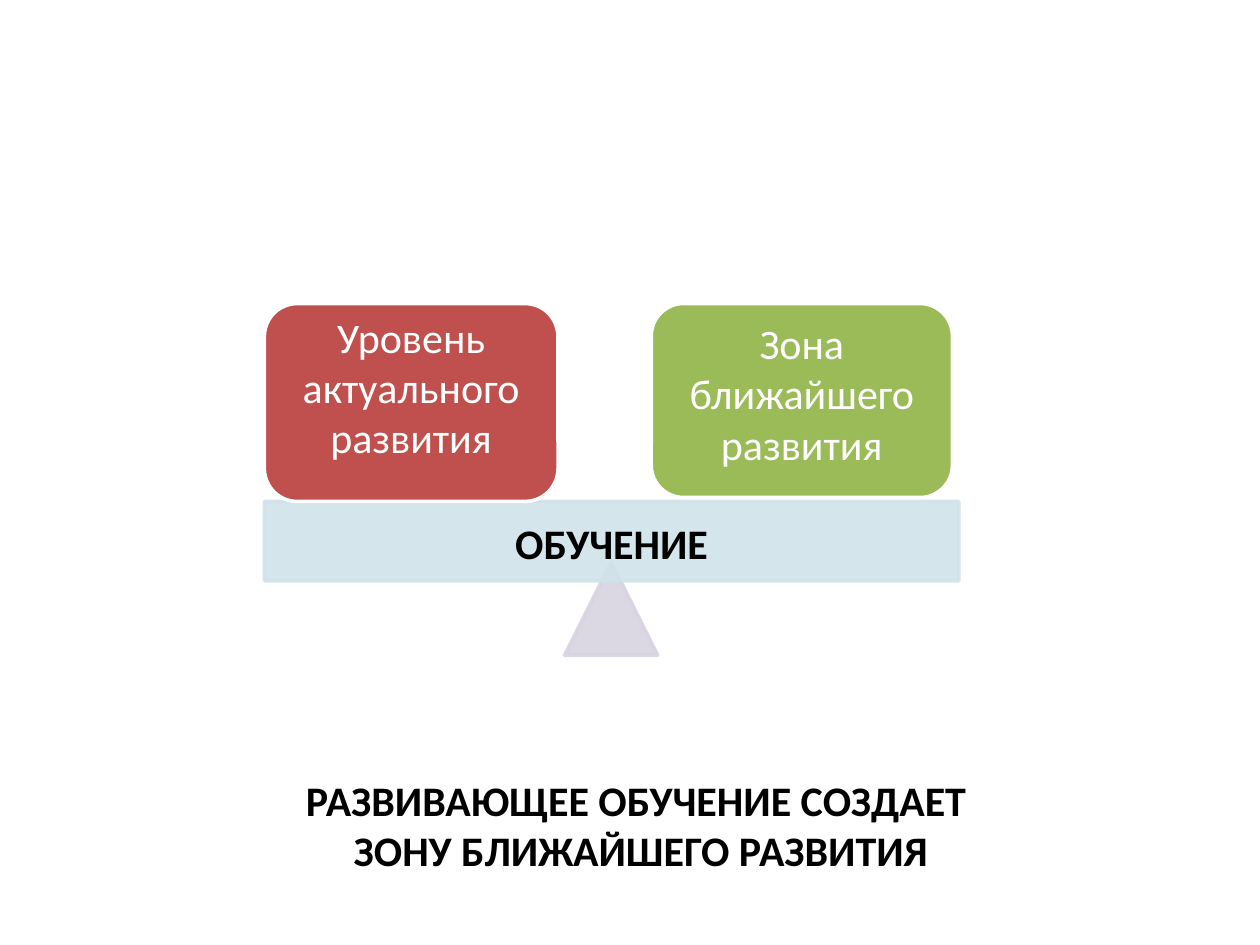
from dataclasses import dataclass

from lxml.etree import SubElement
from pptx import Presentation
from pptx.dml.color import RGBColor
from pptx.enum.shapes import MSO_SHAPE
from pptx.enum.text import MSO_ANCHOR, PP_ALIGN
from pptx.oxml.ns import qn
from pptx.util import Cm, Pt

COLORS = {
    "white": "FFFFFF",
    "black": "000000",
    "actual": "C0504D",
    "zone": "9BBB59",
    "plank": "D0E3EA",
    "pivot": "D8D3E0",
}
PAN_TOP = 6.12
SCALE_ALPHA = 90


@dataclass
class Box:
    """Position and size in centimetres."""
    left: float
    top: float
    width: float
    height: float

    def lengths(self) -> tuple:
        return Cm(self.left), Cm(self.top), Cm(self.width), Cm(self.height)


@dataclass
class Pan:
    box: Box
    color: str
    text: str
    bottom_inset: float


PANS = [
    Pan(Box(5.33, PAN_TOP, 5.92, 3.99), "actual", "Уровень актуального развития", 0.64),
    Pan(Box(13.13, PAN_TOP, 6.07, 3.91), "zone", "Зона ближайшего развития", 0.3),
]


def rgb(name: str) -> RGBColor:
    return RGBColor.from_string(COLORS[name])


def add_block(slide, kind: MSO_SHAPE, box: Box, fill: str, line: str, alpha: int = 100):
    block = slide.shapes.add_shape(kind, *box.lengths())
    block.shadow.inherit = False
    block.fill.solid()
    block.fill.fore_color.rgb = rgb(fill)
    block.line.color.rgb = rgb(line)
    block.line.width = Pt(2)
    if alpha < 100:
        for color in block._element.spPr.iter(qn("a:srgbClr")):
            SubElement(color, qn("a:alpha"), val=str(alpha * 1000))
    return block


def write_lines(frame, lines: list[str], color: str, bold: bool = False) -> None:
    frame.word_wrap = True
    for index, line in enumerate(lines):
        paragraph = frame.paragraphs[0] if index == 0 else frame.add_paragraph()
        paragraph.text = line
        paragraph.alignment = PP_ALIGN.CENTER
        paragraph.font.name = "Calibri"
        paragraph.font.size = Pt(24)
        paragraph.font.bold = bold
        paragraph.font.color.rgb = rgb(color)


def add_pan(slide, pan: Pan) -> None:
    block = add_block(slide, MSO_SHAPE.ROUNDED_RECTANGLE, pan.box, pan.color, "white")
    frame = block.text_frame
    frame.vertical_anchor = MSO_ANCHOR.MIDDLE
    frame.margin_top = 0
    frame.margin_bottom = Cm(pan.bottom_inset)
    write_lines(frame, [pan.text], "white")


def add_label(slide, box: Box, lines: list[str]) -> None:
    label = slide.shapes.add_textbox(*box.lengths())
    write_lines(label.text_frame, lines, "black", bold=True)


def main() -> None:
    prs = Presentation()
    prs.slide_width, prs.slide_height = Cm(25.4), Cm(19.05)
    slide = prs.slides.add_slide(prs.slide_layouts[6])

    # Balance: pivot and plank
    add_block(slide, MSO_SHAPE.ISOSCELES_TRIANGLE, Box(11.38, 11.33, 1.88, 1.88),
              "pivot", "pivot", SCALE_ALPHA)
    add_block(slide, MSO_SHAPE.RECTANGLE, Box(5.33, 10.11, 14, 1.6),
              "plank", "plank", SCALE_ALPHA)

    # Levels resting on the plank
    for pan in PANS:
        add_pan(slide, pan)

    # Plank label and conclusion
    add_label(slide, Box(10.03, 10.31, 4.6, 1.27), ["ОБУЧЕНИЕ"])
    add_label(slide, Box(1.3, 15.49, 23.24, 2.31),
              ["РАЗВИВАЮЩЕЕ ОБУЧЕНИЕ СОЗДАЕТ ", "ЗОНУ БЛИЖАЙШЕГО РАЗВИТИЯ"])

    prs.save("out.pptx")


if __name__ == "__main__":
    main()
